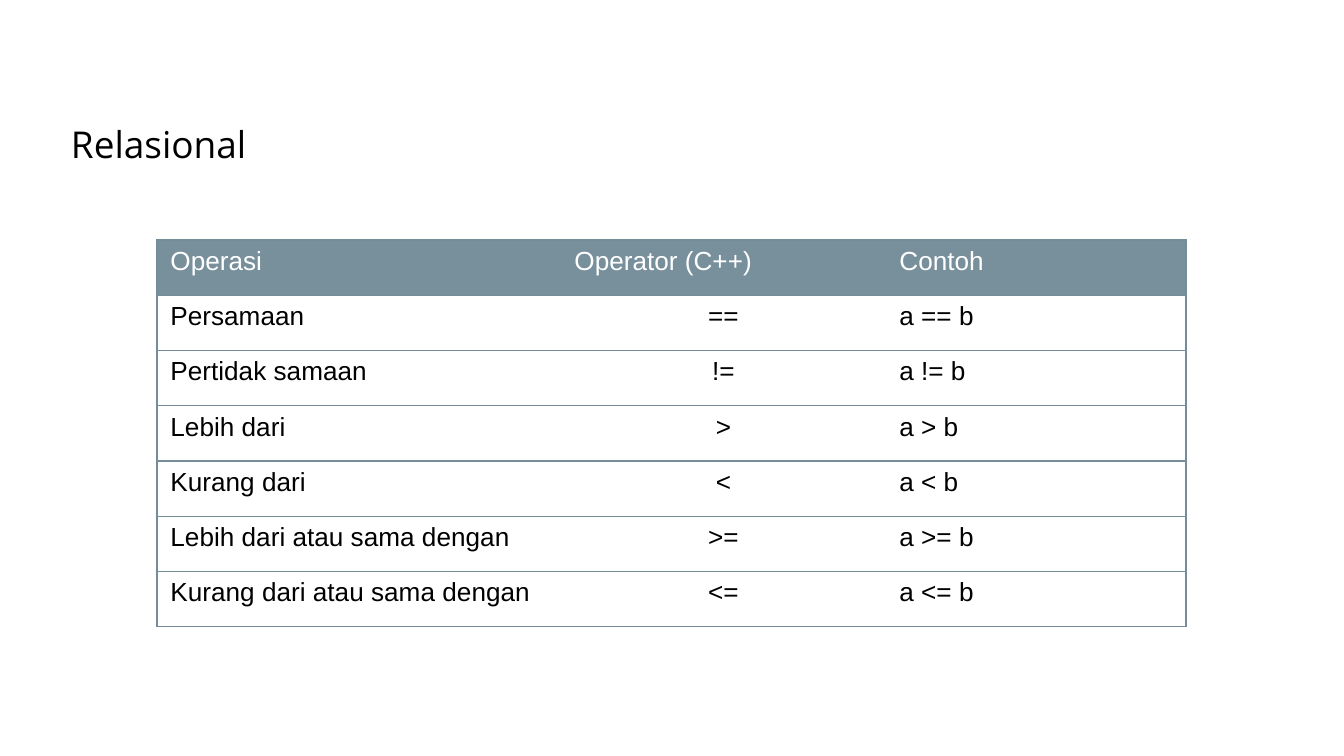
from dataclasses import dataclass

from lxml import etree
from pptx import Presentation
from pptx.dml.color import RGBColor
from pptx.enum import text
from pptx.oxml import ns
from pptx.util import Emu, Pt

SCALE = 914400 / 134.4


@dataclass(frozen=True)
class Theme:
    ink: str = "000000"
    light: str = "FFFFFF"
    head: str = "78909C"
    rule: str = "748D99"
    title_font: str = "Open Sans"
    body_font: str = "Arial"
    title_size: float = 19.8
    body_size: float = 14
    rule_size: float = 0.75


THEME = Theme()
ROWS = [
    ("Operasi", "Operator (C++)", "Contoh"),
    ("Persamaan", "==", "a == b"),
    ("Pertidak samaan", "!=", "a != b"),
    ("Lebih dari", ">", "a > b"),
    ("Kurang dari", "<", "a < b"),
    ("Lebih dari atau sama dengan", ">=", "a >= b"),
    ("Kurang dari atau sama dengan", "<=", "a <= b"),
]
WIDTHS = (404, 325, 300)


def px(count):
    return Emu(round(count * SCALE))


def write(para, words, font, size, color):
    run = para.add_run()
    run.text = words
    for key, value in {"name": font, "size": Pt(size), "bold": False}.items():
        setattr(run.font, key, value)
    run.font.color.rgb = RGBColor.from_string(color)


def edge(cell, side, shown):
    """Draw or hide the rule on one side (L, R, T or B) of a cell."""
    props = cell._tc.get_or_add_tcPr()
    line = etree.SubElement(props, ns.qn(f"a:ln{side}"), w=str(Pt(THEME.rule_size)))
    if shown:
        fill = etree.SubElement(line, ns.qn("a:solidFill"))
        etree.SubElement(fill, ns.qn("a:srgbClr"), val=THEME.rule)
    else:
        etree.SubElement(line, ns.qn("a:noFill"))


def add_title(slide, box, words):
    frame = slide.shapes.add_textbox(*map(px, box)).text_frame
    style = {"word_wrap": True, "vertical_anchor": text.MSO_ANCHOR.TOP}
    style |= {f"margin_{side}": px(13) for side in ("left", "top", "right", "bottom")}
    for key, value in style.items():
        setattr(frame, key, value)
    write(frame.paragraphs[0], words, THEME.title_font, THEME.title_size, THEME.ink)


def add_grid(slide, box, rows, widths):
    table = slide.shapes.add_table(len(rows), len(widths), *map(px, box)).table
    for col, width in zip(table.columns, widths):
        col.width = px(width)
    for row in table.rows:
        row.height = px(box[3] / len(rows))
    last = len(widths) - 1
    for r, row in enumerate(rows):
        for c, words in enumerate(row):
            cell = table.cell(r, c)
            sides = {"L": c == 0, "R": c == last, "T": True, "B": True}
            for side, shown in sides.items():
                edge(cell, side, shown)
            cell.fill.solid()
            cell.fill.fore_color.rgb = RGBColor.from_string(THEME.light if r else THEME.head)
            para = cell.text_frame.paragraphs[0]
            if r and c == 1:
                para.alignment = text.PP_ALIGN.CENTER
            color = THEME.ink if r else THEME.light
            write(para, words, THEME.body_font, THEME.body_size, color)


def main():
    deck = Presentation()
    deck.slide_width, deck.slide_height = px(1344), px(756)
    slide = deck.slides.add_slide(deck.slide_layouts[6])
    add_title(slide, (58, 109, 1228, 58), "Relasional")
    add_grid(slide, (157, 240, sum(WIDTHS), 387), ROWS, WIDTHS)
    deck.save("out.pptx")


if __name__ == "__main__":
    main()
